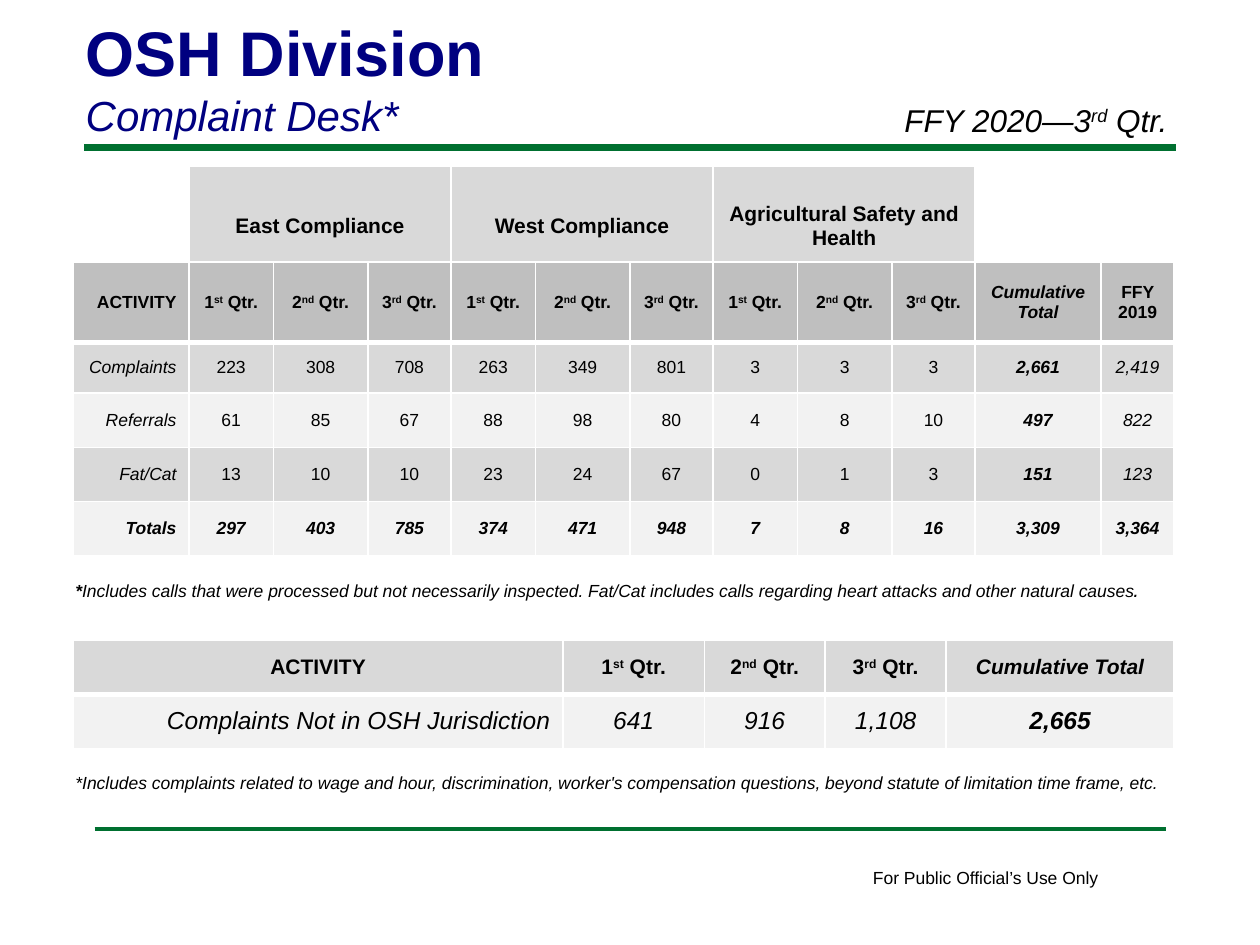
from dataclasses import dataclass

from lxml import etree
from pptx import Presentation
from pptx.dml.color import RGBColor
from pptx.enum.shapes import MSO_CONNECTOR
from pptx.enum.text import MSO_ANCHOR, MSO_AUTO_SIZE, PP_ALIGN
from pptx.oxml.ns import qn
from pptx.util import Inches, Pt

LEFT, CENTER, RIGHT = PP_ALIGN.LEFT, PP_ALIGN.CENTER, PP_ALIGN.RIGHT
TOP, MIDDLE = MSO_ANCHOR.TOP, MSO_ANCHOR.MIDDLE
STRAIGHT = MSO_CONNECTOR.STRAIGHT

BLACK = RGBColor(0x00, 0x00, 0x00)
WHITE = RGBColor(0xFF, 0xFF, 0xFF)
NAVY = RGBColor(0x00, 0x00, 0x80)
GREEN = RGBColor(0x00, 0x70, 0x30)
HEADER_GRAY = RGBColor(0xBF, 0xBF, 0xBF)
BAND_GRAY = RGBColor(0xD9, 0xD9, 0xD9)
LIGHT_GRAY = RGBColor(0xF2, 0xF2, 0xF2)


@dataclass(frozen=True)
class Run:
    text: str
    size: float = 10
    bold: bool = False
    italic: bool = False
    color: RGBColor = BLACK
    superscript: bool = False


@dataclass(frozen=True)
class Cell:
    runs: list[Run]
    alignment: PP_ALIGN = CENTER


@dataclass(frozen=True)
class Row:
    cells: list[Cell]
    height: float
    fill: RGBColor
    bottom_border: float = 1


@dataclass(frozen=True)
class Rule:
    left: float
    right: float
    top: float
    weight: float


@dataclass(frozen=True)
class Note:
    box: tuple[float, float, float, float]
    runs: list[Run]
    wrap: bool = True


def add_runs(paragraph, runs: list[Run], alignment: PP_ALIGN) -> None:
    paragraph.alignment = alignment
    for item in runs:
        run = paragraph.add_run()
        run.text = item.text
        formats = {"name": "Arial", "size": Pt(item.size), "bold": item.bold, "italic": item.italic}
        for name, value in formats.items():
            setattr(run.font, name, value)
        run.font.color.rgb = item.color
        if item.superscript:
            run.font._element.set("baseline", "30000")


def ordinal_runs(before: str, suffix: str, size: float, **style: bool) -> list[Run]:
    """Runs for a quarter name whose ordinal suffix is raised."""
    return [
        Run(before, size, **style),
        Run(suffix, size, superscript=True, **style),
        Run(" Qtr.", size, **style),
    ]


def quarter_cells(size: float) -> list[Cell]:
    ordinals = (("1", "st"), ("2", "nd"), ("3", "rd"))
    return [Cell(ordinal_runs(number, suffix, size, bold=True)) for number, suffix in ordinals]


def add_borders(cell, bottom_weight: float) -> None:
    properties = cell._tc.get_or_add_tcPr()
    weights = {"a:lnL": 1, "a:lnR": 1, "a:lnT": 1, "a:lnB": bottom_weight}
    for tag, weight in weights.items():
        line = etree.SubElement(properties, qn(tag), w=str(Pt(weight)))
        fill = etree.SubElement(line, qn("a:solidFill"))
        etree.SubElement(fill, qn("a:srgbClr"), val=str(WHITE))


def add_table(slide, left: float, top: float, widths: list[float], rows: list[Row]) -> None:
    height = sum(row.height for row in rows)
    table = slide.shapes.add_table(
        len(rows), len(widths), Inches(left), Inches(top), Inches(sum(widths)), Inches(height)
    ).table
    table.first_row = table.horz_banding = False
    for column, width in zip(table.columns, widths):
        column.width = Inches(width)
    for table_row, row in zip(table.rows, rows):
        table_row.height = Inches(row.height)
        for table_cell, cell in zip(table_row.cells, row.cells):
            add_borders(table_cell, row.bottom_border)
            table_cell.fill.solid()
            table_cell.fill.fore_color.rgb = row.fill
            table_cell.vertical_anchor = MIDDLE
            add_runs(table_cell.text_frame.paragraphs[0], cell.runs, cell.alignment)


def add_rule(slide, rule: Rule) -> None:
    top = Inches(rule.top)
    line = slide.shapes.add_connector(STRAIGHT, Inches(rule.left), top, Inches(rule.right), top)
    line.line.color.rgb = GREEN
    line.line.width = Pt(rule.weight)
    etree.SubElement(line._element.spPr, qn("a:effectLst"))


def add_note(slide, note: Note) -> None:
    frame = slide.shapes.add_textbox(*map(Inches, note.box)).text_frame
    frame.word_wrap = note.wrap
    add_runs(frame.paragraphs[0], note.runs, LEFT)


def fill_title(title) -> None:
    title.left, title.top, title.width, title.height = map(Inches, (0.58, 0.06, 8.25, 1.11))
    frame = title.text_frame
    frame.auto_size = MSO_AUTO_SIZE.NONE
    frame.vertical_anchor = TOP
    add_runs(frame.paragraphs[0], [Run("OSH Division", 36, bold=True, color=NAVY)], LEFT)
    add_runs(frame.add_paragraph(), [Run("Complaint Desk*", 24, italic=True, color=NAVY)], LEFT)


def activity_row(label: str, values: str, height: float, fill: RGBColor) -> Row:
    """Quarter counts, then the cumulative total and the prior year."""
    is_total = label == "Totals"
    *counts, cumulative, prior_year = values.split()
    cells = [Cell([Run(label, bold=is_total, italic=True)], RIGHT)]
    cells += [Cell([Run(count, bold=is_total, italic=is_total)]) for count in counts]
    cells.append(Cell([Run(cumulative, bold=True, italic=True)]))
    cells.append(Cell([Run(prior_year, bold=is_total, italic=True)]))
    return Row(cells, height, fill)


RULES = [Rule(0.67, 9.33, 1.17, 4), Rule(0.75, 9.25, 6.58, 2)]

NOTES = [
    Note((6.83, 6.83, 2.01, 0.27), [Run("For Public Official’s Use Only")], wrap=False),
    Note((0.5, 4.53, 8.83, 0.3), [
        Run("*", bold=True, italic=True),
        Run("Includes calls that were processed but not necessarily inspected. "
            "Fat/Cat includes calls regarding heart attacks and other natural causes", italic=True),
        Run(".", 12, italic=True),
    ]),
    Note((0.5, 6.08, 8.92, 0.27), [
        Run("*Includes complaints related to wage and hour, discrimination, worker's compensation "
            "questions, beyond statute of limitation time frame, etc.", italic=True),
    ]),
    Note((7.08, 0.75, 2.5, 0.4), ordinal_runs("FFY 2020—3", "rd", 18, italic=True)),
]

DIVISIONS = ["East Compliance", "West Compliance", "Agricultural Safety and Health"]
DIVISION_ROWS = [Row([Cell([Run(name, 12, bold=True)]) for name in DIVISIONS], 0.95, BAND_GRAY, 3)]

ACTIVITY_WIDTHS = [0.92] + [0.67, 0.75, 0.66] * len(DIVISIONS) + [1, 0.58]
ACTIVITY_ROWS = [
    Row([
        Cell([Run("ACTIVITY", bold=True)], RIGHT),
        *quarter_cells(10) * len(DIVISIONS),
        Cell([Run("Cumulative Total", bold=True, italic=True)]),
        Cell([Run("FFY 2019", bold=True)]),
    ], 0.64, HEADER_GRAY, 3),
    activity_row("Complaints", "223 308 708 263 349 801 3 3 3 2,661 2,419", 0.4, BAND_GRAY),
    activity_row("Referrals", "61 85 67 88 98 80 4 8 10 497 822", 0.43, LIGHT_GRAY),
    activity_row("Fat/Cat", "13 10 10 23 24 67 0 1 3 151 123", 0.43, BAND_GRAY),
    activity_row("Totals", "297 403 785 374 471 948 7 8 16 3,309 3,364", 0.43, LIGHT_GRAY),
]

JURISDICTION_WIDTHS = [3.89, 1.12, 0.96, 0.96, 1.81]
JURISDICTION_ROWS = [
    Row([
        Cell([Run("ACTIVITY", 12, bold=True)]),
        *quarter_cells(12),
        Cell([Run("Cumulative Total", 12, bold=True, italic=True)]),
    ], 0.43, BAND_GRAY, 3),
    Row([
        Cell([Run("Complaints Not in OSH Jurisdiction", 14, italic=True)], RIGHT),
        *[Cell([Run(count, 14, italic=True)]) for count in ("641", "916", "1,108")],
        Cell([Run("2,665", 14, bold=True, italic=True)]),
    ], 0.43, LIGHT_GRAY),
]


def main() -> None:
    presentation = Presentation()
    presentation.slide_width, presentation.slide_height = Inches(10), Inches(7.5)
    slide = presentation.slides.add_slide(presentation.slide_layouts[5])
    fill_title(slide.shapes.title)
    for rule in RULES:
        add_rule(slide, rule)
    add_table(slide, 1.5, 1.32, [2.08] * len(DIVISIONS), DIVISION_ROWS)
    add_table(slide, 0.58, 2.08, ACTIVITY_WIDTHS, ACTIVITY_ROWS)
    add_table(slide, 0.58, 5.08, JURISDICTION_WIDTHS, JURISDICTION_ROWS)
    for note in NOTES:
        add_note(slide, note)
    presentation.save("out.pptx")


if __name__ == "__main__":
    main()
